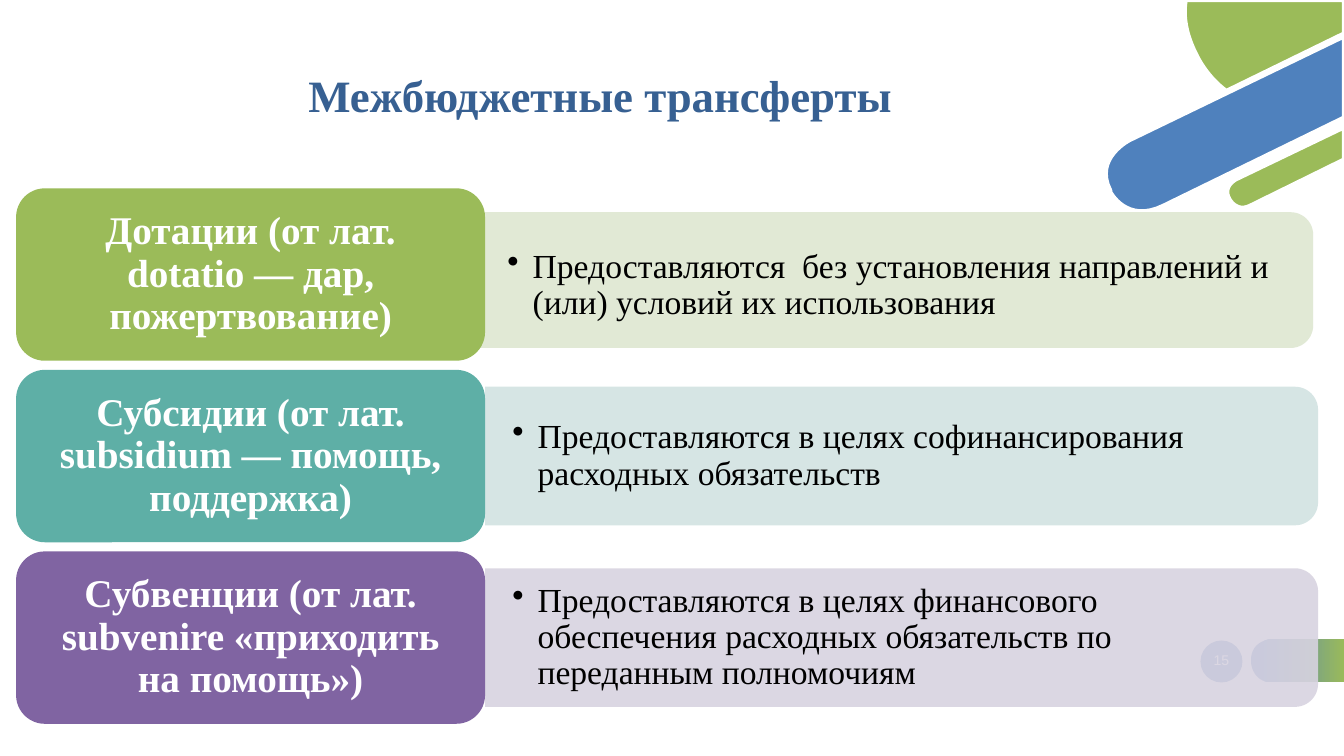
from lxml import etree
from pptx import Presentation
from pptx.dml.color import RGBColor
from pptx.enum import shapes, text
from pptx.oxml import ns
from pptx.util import Pt

WHITE = RGBColor(0xFF, 0xFF, 0xFF)
BLACK = RGBColor(0x00, 0x00, 0x00)
NAVY = RGBColor(0x37, 0x60, 0x92)
BLUE = RGBColor(0x4F, 0x81, 0xBD)
GREEN = RGBColor(0x9B, 0xBB, 0x59)
PALE_GREEN = RGBColor(0xDE, 0xE7, 0xD1)
TEAL = RGBColor(0x5E, 0xAF, 0xA6)
PALE_TEAL = RGBColor(0xD2, 0xE3, 0xE2)
PURPLE = RGBColor(0x80, 0x64, 0xA2)
PALE_PURPLE = RGBColor(0xD8, 0xD3, 0xE0)

WIDTH, HEIGHT = 960, 540
FONT = "Times New Roman"
CURVE_STEPS = 16

# Outlines in points from the corner of their box:
# pairs are straight steps, sixes are cubic curves.
GREEN_DISC = [(75, 40), (75, 40, 82, 55, 96, 65), (180, 24), (180, 0), (67, 0),
              (65, 11, 67, 24, 74, 38)]
BLUE_BAR = [(27, 100), (27, 100, 1, 113, 13, 136), (13, 137),
            (13, 137, 24.5, 160, 51, 147), (180, 84), (180, 26)]
GREEN_BAR = [(180, 91), (103, 128), (103, 128, 93, 133, 98, 142),
             (98, 142, 103, 152, 113, 147), (180, 114)]
PILL = [(16, 31), (68, 31), (68, 0), (16, 0), (16, 0, 0.5, 0, 0.5, 15.5),
        (0.5, 15.5, 0.5, 31, 16, 31)]

# Heading, text, tile colour, panel colour, panel shift, panel height, text drop
TRANSFERS = [
    ("Дотации (от лат. dotatio — дар, пожертвование)",
     "Предоставляются  без установления направлений и (или) условий их использования",
     GREEN, PALE_GREEN, (-3.5, 4), 97, 4),
    ("Субсидии (от лат. subsidium — помощь, поддержка)",
     "Предоставляются в целях софинансирования расходных обязательств",
     TEAL, PALE_TEAL, (0, 0), 99, 0),
    ("Субвенции (от лат. subvenire «приходить на помощь»)",
     "Предоставляются в целях финансового обеспечения расходных обязательств "
     "по переданным полномочиям",
     PURPLE, PALE_PURPLE, (0, 0), 99, 0),
]


def write(frame, words, size, color, bold=False, font=FONT, inset=(7.2, 3.6),
          align=text.PP_ALIGN.LEFT, anchor=text.MSO_ANCHOR.MIDDLE, bullet=False):
    frame.word_wrap = True
    frame.vertical_anchor = anchor
    frame.margin_left = frame.margin_right = Pt(inset[0])
    frame.margin_top = frame.margin_bottom = Pt(inset[1])
    para = frame.paragraphs[0]
    para.alignment = align
    para.line_spacing = 0.9
    span = para.add_run()
    span.text = words
    span.font.name, span.font.size, span.font.bold = font, Pt(size), bold
    span.font.color.rgb = color
    if bullet:
        props = para._p.get_or_add_pPr()
        props.set("marL", str(Pt(18)))
        props.set("indent", str(-Pt(18)))
        etree.SubElement(props, ns.qn("a:buChar")).set("char", "•")


def add_plain_shape(page, kind, box, color):
    shape = page.shapes.add_shape(kind, *map(Pt, box))
    shape.shadow.inherit = False
    shape.fill.solid()
    shape.fill.fore_color.rgb = color
    shape.line.fill.background()
    return shape


def curve_points(start, curve):
    """Points along a cubic curve, without its start."""
    knots = [start, curve[:2], curve[2:4], curve[4:]]
    for step in range(1, CURVE_STEPS + 1):
        t = step / CURVE_STEPS
        weights = ((1 - t) ** 3, 3 * t * (1 - t) ** 2, 3 * t * t * (1 - t), t ** 3)
        yield tuple(sum(w * knot[axis] for w, knot in zip(weights, knots))
                    for axis in (0, 1))


def add_outline(page, left, top, steps, color):
    points = [steps[0]]
    for step in steps[1:]:
        points.extend([step] if len(step) == 2 else curve_points(points[-1], step))
    places = [(Pt(left + x), Pt(top + y)) for x, y in points]
    builder = page.shapes.build_freeform(*places[0])
    builder.add_line_segments(places[1:], close=True)
    shape = builder.convert_to_shape()
    shape.shadow.inherit = False
    shape.fill.solid()
    shape.fill.fore_color.rgb = color
    shape.line.fill.background()
    return shape


def add_page_number(page, left, top, number):
    circle = add_plain_shape(page, shapes.MSO_SHAPE.OVAL, (left, top + 1, 30, 30), BLUE)
    write(circle.text_frame, number, 10, WHITE, font="Arial", inset=(0, 0),
          align=text.PP_ALIGN.CENTER)
    pill = add_outline(page, left + 35.5, top, PILL, BLUE)
    pill.fill.gradient()
    pill.fill.gradient_angle = 0
    for stop, place, color in zip(pill.fill.gradient_stops, (0.12, 1), (BLUE, GREEN)):
        stop.position = place
        stop.color.rgb = color


def add_corner(page, left, top):
    for steps, color in ((GREEN_DISC, GREEN), (BLUE_BAR, BLUE), (GREEN_BAR, GREEN)):
        shape = add_outline(page, left, top, steps, color)
        shape.line.color.rgb = WHITE
        shape.line.width = Pt(3)


def place_title(page, box, words):
    title = page.shapes.title
    title.left, title.top, title.width, title.height = map(Pt, box)
    write(title.text_frame, words, 32, NAVY, bold=True, anchor=text.MSO_ANCHOR.TOP)


def add_transfer(page, box, transfer):
    """One row: a coloured tile on the left over a pale panel with its text."""
    heading, words, color, pale, shift, panel_height, text_drop = transfer
    left, top, width, height = box
    tile_width = 335
    panel_left = left + tile_width + shift[0]
    panel_top = top + (height - panel_height) / 2 + shift[1]
    panel_width = width - tile_width

    # The panel is a quarter turn of an upright shape with the same centre.
    turn = (panel_width - panel_height) / 2
    panel = add_plain_shape(page, shapes.MSO_SHAPE.ROUND_2_SAME_RECTANGLE,
                            (panel_left + turn, panel_top - turn,
                             panel_height, panel_width), pale)
    panel.rotation = 90
    alpha = etree.SubElement(panel.fill._xPr.find(".//" + ns.qn("a:srgbClr")),
                             ns.qn("a:alpha"))
    alpha.set("val", "90000")

    note = page.shapes.add_textbox(Pt(panel_left), Pt(panel_top + text_drop),
                                   Pt(panel_width - 5), Pt(panel_height))
    write(note.text_frame, words, 24, BLACK, inset=(19.5, 10), bullet=True)

    tile = add_plain_shape(page, shapes.MSO_SHAPE.ROUNDED_RECTANGLE,
                           (left, top, tile_width, height), color)
    write(tile.text_frame, heading, 28, WHITE, bold=True, inset=(15, 10),
          align=text.PP_ALIGN.CENTER)


def add_transfer_rows(page, box):
    left, top, width, height = box
    gap = 6.5
    row_height = (height - gap * (len(TRANSFERS) - 1)) / len(TRANSFERS)
    for index, transfer in enumerate(TRANSFERS):
        add_transfer(page, (left, top + index * (row_height + gap), width, row_height),
                     transfer)


def main():
    deck = Presentation()
    deck.slide_width, deck.slide_height = Pt(WIDTH), Pt(HEIGHT)
    page = deck.slides.add_slide(deck.slide_layouts[5])
    add_page_number(page, 857.5, 456.5, "15")
    add_corner(page, WIDTH - 180, 0)
    place_title(page, (213, 49, WIDTH - 213, 65.5), "Межбюджетные трансферты")
    add_transfer_rows(page, (11.5, 134.5, 930, 382.5))
    deck.save("out.pptx")


if __name__ == "__main__":
    main()
